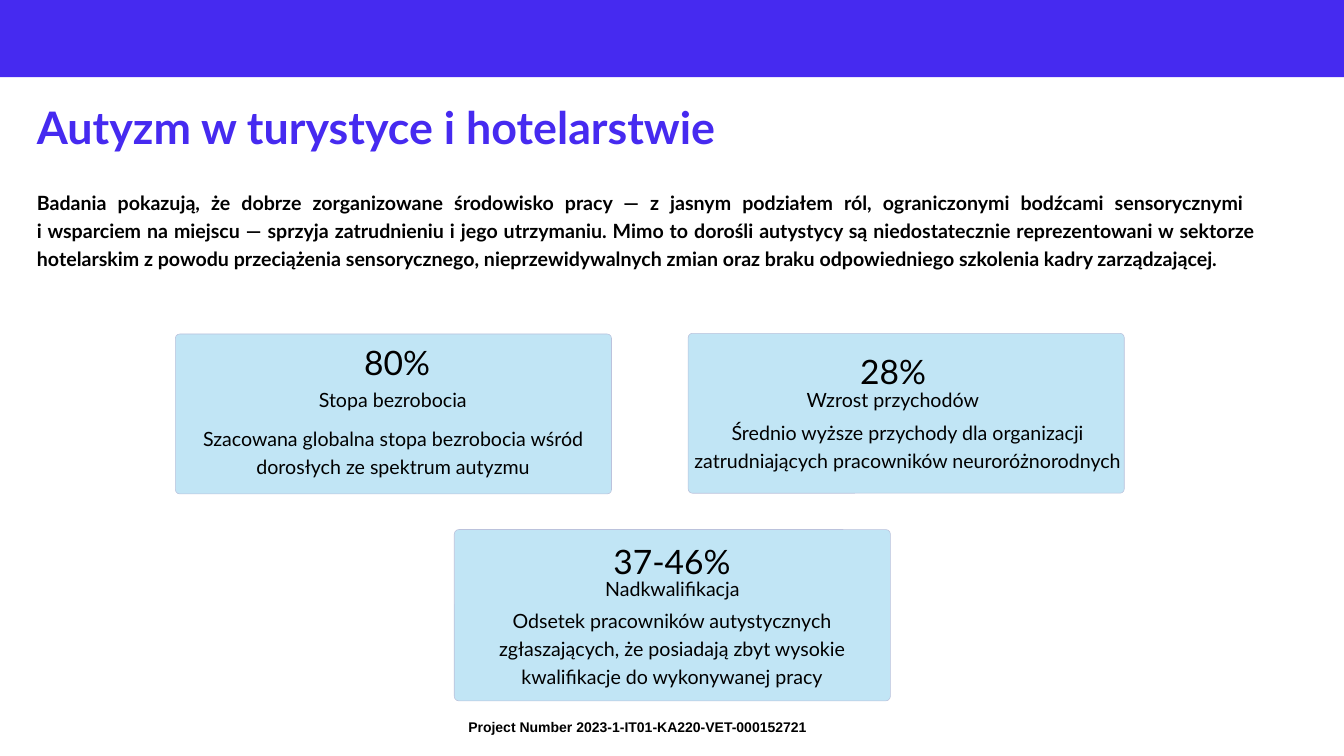
from dataclasses import dataclass

from pptx import Presentation
from pptx.dml.color import RGBColor
from pptx.enum.shapes import MSO_SHAPE
from pptx.enum.text import MSO_ANCHOR, PP_ALIGN
from pptx.util import Inches, Pt


@dataclass(frozen=True)
class Theme:
    accent: str = "462AF0"
    card: str = "C1E5F5"
    card_edge: str = "BBC2DC"
    ink: str = "000000"
    font: str = "Lato"
    footer_font: str = "Arial"
    title_size: int = 48
    figure_size: int = 36
    body_size: int = 21
    footer_size: int = 15


THEME = Theme()

INTRO = (
    "Badania pokazują, że dobrze zorganizowane środowisko pracy — z jasnym podziałem ról, "
    "ograniczonymi bodźcami sensorycznymi \vi wsparciem na miejscu — sprzyja zatrudnieniu "
    "i jego utrzymaniu. Mimo to dorośli autystycy są niedostatecznie reprezentowani w sektorze "
    "hotelarskim z powodu przeciążenia sensorycznego, nieprzewidywalnych zmian oraz braku "
    "odpowiedniego szkolenia kadry zarządzającej."
)

CARDS = [
    {
        "frame": (6.76, 7.88, 6.49, 2.55),
        "figure": ("37-46%", (6.97, 7.78, 6.06, 0.88)),
        "label": ("Nadkwalifikacja", (8.25, 8.5, 3.51, 0.44)),
        "detail": (
            "Odsetek pracowników autystycznych zgłaszających, że posiadają zbyt wysokie "
            "kwalifikacje do wykonywanej pracy",
            (6.97, 8.99, 6.06, 0.85),
        ),
    },
    {
        "frame": (10.24, 4.96, 6.49, 2.38),
        "figure": ("28%", (10.26, 4.94, 6.06, 0.88)),
        "label": ("Wzrost przychodów", (11.53, 5.68, 3.51, 0.44)),
        "detail": (
            "Średnio wyższe przychody dla organizacji zatrudniających pracowników "
            "neuroróżnorodnych",
            (10.26, 6.2, 6.49, 0.85),
        ),
    },
    {
        "frame": (2.61, 4.97, 6.49, 2.38),
        "figure": ("80%", (2.88, 4.81, 6.06, 0.88)),
        "label": ("Stopa bezrobocia", (3.99, 5.69, 3.71, 0.44)),
        "detail": (
            "Szacowana globalna stopa bezrobocia wśród dorosłych ze spektrum autyzmu",
            (2.82, 6.29, 6.06, 0.85),
        ),
    },
]


def add_text(slide, text, place, *, size=THEME.body_size, font=THEME.font, color=THEME.ink,
             bold=False, align=PP_ALIGN.LEFT, spacing=None, wrap=True, inset=(0, 0),
             anchor=MSO_ANCHOR.TOP):
    frame = slide.shapes.add_textbox(*map(Inches, place)).text_frame
    frame.word_wrap = wrap
    frame.vertical_anchor = anchor
    frame.margin_left = frame.margin_right = Inches(inset[0])
    frame.margin_top = frame.margin_bottom = Inches(inset[1])
    paragraph = frame.paragraphs[0]
    paragraph.text = text
    paragraph.alignment = align
    paragraph.line_spacing = spacing
    for run in paragraph.runs:
        run.font.name = font
        run.font.size = Pt(size)
        run.font.bold = bold
        run.font.color.rgb = RGBColor.from_string(color)


def add_block(slide, preset, place, fill, edge=None):
    block = slide.shapes.add_shape(preset, *map(Inches, place))
    block.shadow.inherit = False
    block.fill.solid()
    block.fill.fore_color.rgb = RGBColor.from_string(fill)
    if edge:
        block.line.color.rgb = RGBColor.from_string(edge)
        block.line.width = Pt(0.6)
    else:
        block.line.fill.background()
    return block


def add_card(slide, card):
    panel = add_block(slide, MSO_SHAPE.ROUNDED_RECTANGLE, card["frame"],
                      THEME.card, THEME.card_edge)
    panel.adjustments[0] = 0.027
    add_text(slide, *card["figure"], size=THEME.figure_size, align=PP_ALIGN.CENTER,
             spacing=Pt(63), wrap=False)
    add_text(slide, *card["label"], align=PP_ALIGN.CENTER, spacing=Pt(31.5), wrap=False)
    add_text(slide, *card["detail"], align=PP_ALIGN.CENTER, spacing=Pt(30))


def main():
    deck = Presentation()
    deck.slide_width = Inches(20)
    deck.slide_height = Inches(11.25)
    slide = deck.slides.add_slide(deck.slide_layouts[6])

    add_text(slide, "Project Number 2023-1-IT01-KA220-VET-000152721", (6.87, 10.65, 5.31, 0.35),
             size=THEME.footer_size, font=THEME.footer_font, bold=True, wrap=False,
             inset=(0.1, 0.05))
    add_block(slide, MSO_SHAPE.RECTANGLE, (0, -0.02, 20, 1.17), THEME.accent)
    add_text(slide, "Autyzm w turystyce i hotelarstwie", (0.45, 1.42, 17.25, 1.04),
             size=THEME.title_size, color=THEME.accent, bold=True, spacing=0.9,
             inset=(0.1, 0.05), anchor=MSO_ANCHOR.MIDDLE)
    for card in CARDS:
        add_card(slide, card)
    add_text(slide, INTRO, (0.55, 2.78, 18.12, 1.71), bold=True, align=PP_ALIGN.JUSTIFY,
             spacing=Pt(30))

    deck.save("out.pptx")


if __name__ == "__main__":
    main()
